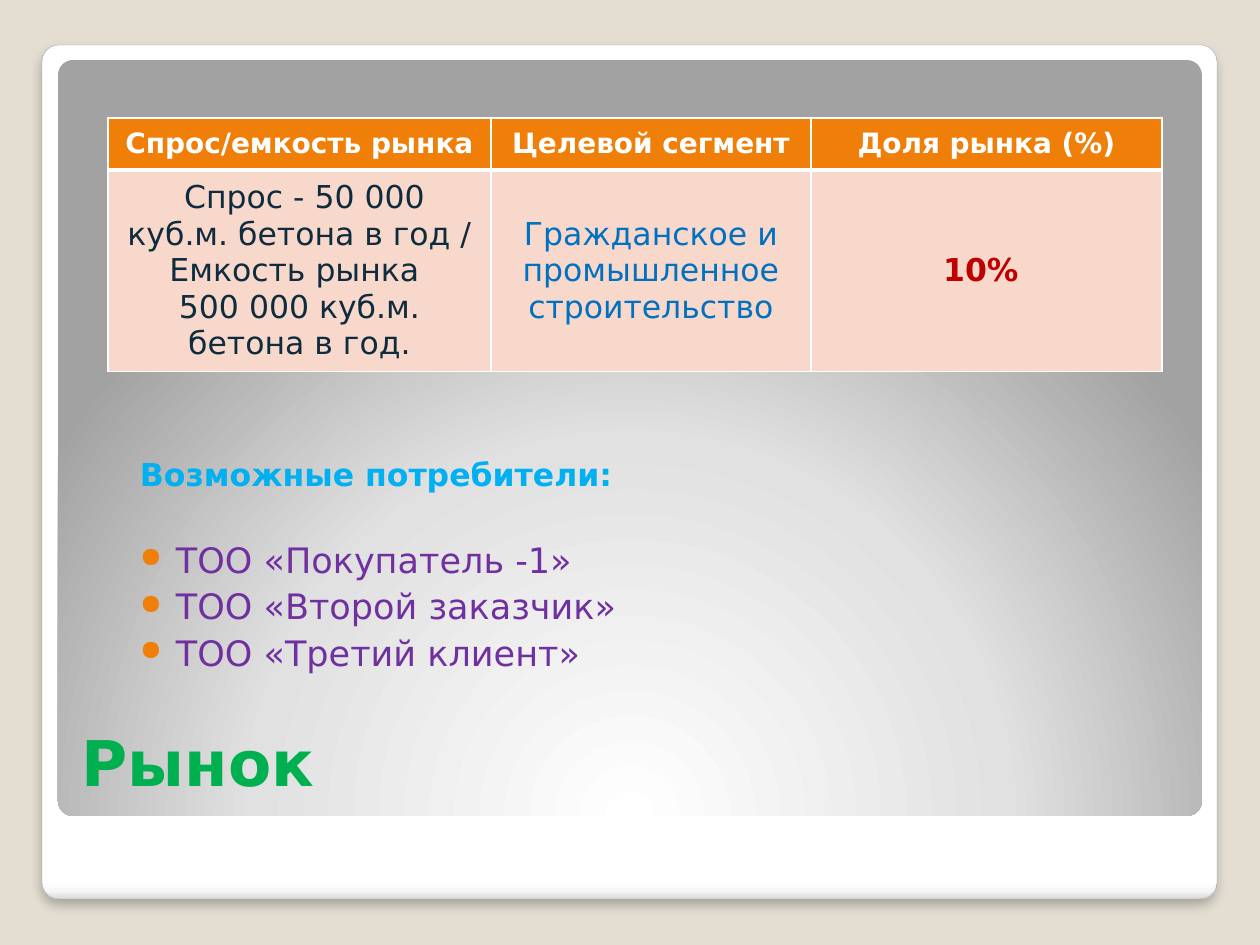
from dataclasses import dataclass

from lxml.etree import SubElement
from pptx import Presentation
from pptx.dml.color import RGBColor
from pptx.enum.shapes import MSO_SHAPE as SHAPE
from pptx.enum.text import MSO_ANCHOR as ANCHOR, PP_ALIGN as ALIGN
from pptx.oxml import parse_xml
from pptx.oxml.ns import nsdecls, qn
from pptx.util import Emu, Pt

EMU_PER_PX = 914400 / 126


@dataclass(frozen=True)
class Theme:
    font: str = "DejaVu Sans"
    title_size: int = 36
    bullet_size: int = 20
    body_size: int = 18
    header_size: int = 16
    backdrop: str = "E3DED1"
    frame_line: str = "A4A4A4"
    white: str = "FFFFFF"
    orange: str = "F07F09"
    cell: str = "F9D8CC"
    title: str = "00B050"
    heading: str = "00B0F0"
    bullet: str = "7030A0"
    demand: str = "0E2C3E"
    segment: str = "0070C0"
    share: str = "C00000"


T = Theme()


def px(*values):
    return [Emu(round(v * EMU_PER_PX)) for v in values]


def write(tf, text, size=T.body_size, color=T.demand, bold=False,
          align=ALIGN.LEFT, before=0):
    """Fill the empty first paragraph, or add one, and return it."""
    p = tf.paragraphs[0] if not tf.text else tf.add_paragraph()
    p.alignment, p.space_before = align, Pt(before)
    r = p.add_run()
    r.text = text
    r.font.name, r.font.size, r.font.bold = T.font, Pt(size), bold
    r.font.color.rgb = RGBColor.from_string(color)
    return p


prs = Presentation()
prs.slide_width, prs.slide_height = px(1260, 945)
s = prs.slides.add_slide(prs.slide_layouts[5])
s.background.fill.solid()
s.background.fill.fore_color.rgb = RGBColor.from_string(T.backdrop)

# White frame with a grey radial panel inside
panels = [
    ((42, 45, 1175, 854),
     [(0, T.white), (98, T.white), (99, "F7F7F7"), (100, "DADADA")],
     '<a:lin ang="5400000" scaled="0"/>'),
    ((58, 60, 1144, 756),
     [(0, T.white), (55, "E1E1E1"), (100, "A2A2A2")],
     '<a:path path="circle"><a:fillToRect l="50000" t="175000" '
     'r="50000" b="-75000"/></a:path>'),
]
frames = []
for box, stops, direction in panels:
    sp = s.shapes.add_shape(SHAPE.ROUNDED_RECTANGLE, *px(*box))
    sp.adjustments[0] = 0.02
    sp.shadow.inherit = False
    sp.line.fill.background()
    stop_xml = "".join(f'<a:gs pos="{pos * 1000}"><a:srgbClr val="{color}"/></a:gs>'
                       for pos, color in stops)
    sp.element.spPr.find(qn("a:prstGeom")).addnext(parse_xml(
        f'<a:gradFill {nsdecls("a")} rotWithShape="1">'
        f'<a:gsLst>{stop_xml}</a:gsLst>{direction}</a:gradFill>'))
    frames.append(sp)

frame = frames[0]
frame.line.color.rgb = RGBColor.from_string(T.frame_line)
frame.line.width = Pt(0.16)
frame.element.spPr.find(qn("a:effectLst")).append(parse_xml(
    f'<a:outerShdw {nsdecls("a")} blurRad="{Pt(6)}" dist="{Pt(4)}" dir="5400000" '
    'algn="t" rotWithShape="0"><a:srgbClr val="000000"><a:alpha val="25000"/>'
    '</a:srgbClr></a:outerShdw>'))

# Title, brought in front of the panels
title = s.shapes.title
title.left, title.top, title.width, title.height = px(69, 689, 1128, 116)
title.element.getparent().append(title.element)
tf = title.text_frame
tf.vertical_anchor = ANCHOR.BOTTOM
write(tf, "Рынок", size=T.title_size, color=T.title, bold=True)

# Possible customers
tf = s.shapes.add_textbox(*px(115, 442, 1043, 256)).text_frame
tf.word_wrap = True
tf.margin_left, tf.margin_top, tf.margin_right, tf.margin_bottom = px(25, 13, 13, 6)
write(tf, "Возможные потребители:", color=T.heading, bold=True, before=2.5)
customers = ["ТОО «Покупатель -1»", "ТОО «Второй заказчик»", "ТОО «Третий клиент»"]
indent, = px(36)
for i, customer in enumerate(customers):
    p = write(tf, customer, size=T.bullet_size, color=T.bullet,
              before=2.5 if i else 26)
    pPr = p._p.get_or_add_pPr()
    pPr.set("marL", str(indent))
    pPr.set("indent", str(-indent))
    SubElement(SubElement(pPr, qn("a:buClr")), qn("a:srgbClr"), val=T.orange)
    SubElement(pPr, qn("a:buSzPct"), val="80000")
    SubElement(pPr, qn("a:buChar"), char="●")

# Market table
headers = ["Спрос/емкость рынка", "Целевой сегмент", "Доля рынка (%)"]
values = [
    (T.demand, False, [" Спрос - 50 000 куб.м. бетона в год /", "Емкость рынка ",
                       "500 000 куб.м. бетона в год."]),
    (T.segment, False, ["Гражданское и промышленное строительство"]),
    (T.share, True, ["10% "]),
]
rows = [
    (52, T.orange, T.header_size, [(T.white, True, [h]) for h in headers]),
    (194, T.cell, T.body_size, values),
]
col_widths = [383, 320, 351]
table = s.shapes.add_table(len(rows), len(col_widths),
                           *px(108, 118, sum(col_widths), 246)).table
for col, width in zip(table.columns, px(*col_widths)):
    col.width = width
for i, (height, fill, size, contents) in enumerate(rows):
    table.rows[i].height, = px(height)
    edges = {"L": 1, "R": 1, "T": 3 if i else 1, "B": 1 if i else 3}
    for j, (color, bold, lines) in enumerate(contents):
        cell = table.cell(i, j)
        cell.vertical_anchor = ANCHOR.MIDDLE
        cell.fill.solid()
        cell.fill.fore_color.rgb = RGBColor.from_string(fill)
        for line in lines:
            write(cell.text_frame, line, size=size, color=color, bold=bold,
                  align=ALIGN.CENTER)
        tcPr = cell._tc.get_or_add_tcPr()
        for k, (edge, width) in enumerate(edges.items()):
            tcPr.insert(k, parse_xml(
                f'<a:ln{edge} {nsdecls("a")} w="{Pt(width)}"><a:solidFill>'
                f'<a:srgbClr val="{T.white}"/></a:solidFill></a:ln{edge}>'))

prs.save("out.pptx")
